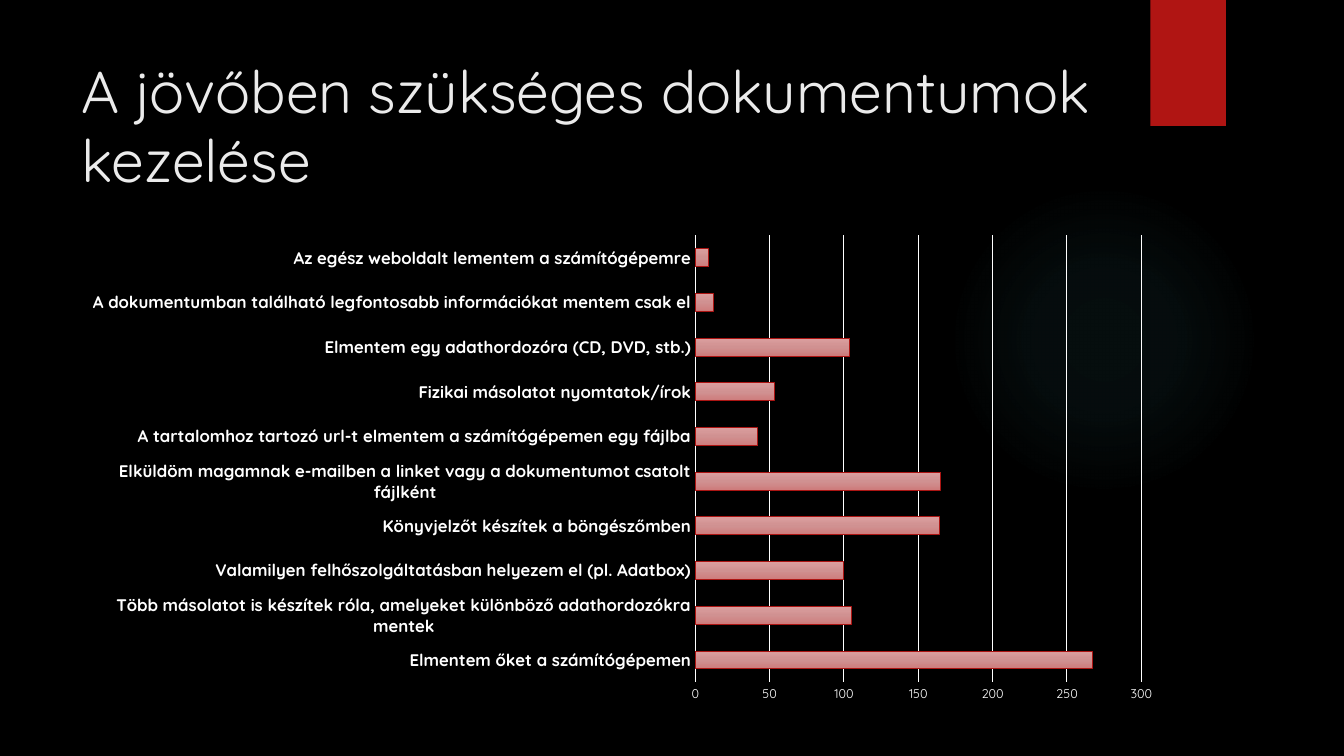
from lxml.etree import SubElement
from pptx import Presentation
from pptx.chart.data import CategoryChartData
from pptx.dml.color import RGBColor
from pptx.enum.chart import XL_CHART_TYPE, XL_TICK_MARK
from pptx.enum.shapes import MSO_SHAPE
from pptx.enum.text import MSO_ANCHOR, MSO_AUTO_SIZE, PP_ALIGN
from pptx.oxml import parse_xml
from pptx.oxml.ns import nsdecls, qn
from pptx.util import Inches, Pt

FONT = "Quicksand"
BLACK = RGBColor(0x00, 0x00, 0x00)
WHITE = RGBColor(0xFF, 0xFF, 0xFF)
TITLE_GREY = RGBColor(0xEB, 0xEB, 0xEB)
RED = RGBColor(0xB0, 0x15, 0x13)
BAR_EDGE = RGBColor(0xAC, 0x15, 0x13)
GLOW = RGBColor(0x50, 0xB9, 0xC1)
BAR_LIGHT = RGBColor(0xDB, 0x9E, 0x9E)
BAR_MID = RGBColor(0xD0, 0x91, 0x91)
BAR_DARK = RGBColor(0xCE, 0x7C, 0x7C)

RADIAL = ('<a:path %s path="circle"><a:fillToRect l="50000" t="50000" '
          'r="50000" b="50000"/></a:path>' % nsdecls("a"))
DOWNWARD = '<a:lin %s ang="5400000" scaled="0"/>' % nsdecls("a")

ANSWERS = [
    ("Elmentem őket a számítógépemen", 267),
    ("Több másolatot is készítek róla, amelyeket különböző adathordozókra mentek", 105),
    ("Valamilyen felhőszolgáltatásban helyezem el (pl. Adatbox)", 100),
    ("Könyvjelzőt készítek a böngészőmben", 164),
    ("Elküldöm magamnak e-mailben a linket vagy a dokumentumot csatolt fájlként", 165),
    ("A tartalomhoz tartozó url-t elmentem a számítógépemen egy fájlba", 42),
    ("Fizikai másolatot nyomtatok/írok", 53),
    ("Elmentem egy adathordozóra (CD, DVD, stb.)", 104),
    ("A dokumentumban található legfontosabb információkat mentem csak el", 12),
    ("Az egész weboldalt lementem a számítógépemre", 9),
]


class SlideBuilder:
    """Holds the style and the current slide, and adds each kind of element."""

    def __init__(self, prs):
        self.s = prs.slides.add_slide(prs.slide_layouts[5])
        self.s.background.fill.solid()
        self.s.background.fill.fore_color.rgb = BLACK

    def style(self, font, size, color=WHITE, bold=False):
        font.name = FONT
        font.size = Pt(size)
        font.bold = bold
        font.color.rgb = color

    def gradient(self, fill, spPr, stops, direction):
        fill.gradient()
        grad = spPr.find(qn("a:gradFill"))
        for child in list(grad):
            grad.remove(child)
        gs_list = SubElement(grad, qn("a:gsLst"))
        for pos, color, alpha in stops:
            gs = SubElement(gs_list, qn("a:gs"), pos=str(pos * 1000))
            clr = SubElement(gs, qn("a:srgbClr"), val=str(color))
            if alpha < 100:
                SubElement(clr, qn("a:alpha"), val=str(alpha * 1000))
        grad.append(parse_xml(direction))

    def shape(self, kind, left, top, width, height):
        sp = self.s.shapes.add_shape(kind, Inches(left), Inches(top),
                                     Inches(width), Inches(height))
        sp.shadow.inherit = False
        sp.line.fill.background()
        return sp

    def glow(self, left, top, size):
        sp = self.shape(MSO_SHAPE.OVAL, left, top, size, size)
        stops = [(0, GLOW, 7), (36, GLOW, 6), (69, GLOW, 0)]
        self.gradient(sp.fill, sp._element.spPr, stops, RADIAL)

    def ribbon(self, left, top, width, height):
        sp = self.shape(MSO_SHAPE.RECTANGLE, left, top, width, height)
        sp.fill.solid()
        sp.fill.fore_color.rgb = RED

    def title(self, text, left, top, width, height):
        sp = self.s.shapes.title
        sp.left, sp.top = Inches(left), Inches(top)
        sp.width, sp.height = Inches(width), Inches(height)
        tf = sp.text_frame
        tf.text = text
        tf.word_wrap = True
        tf.auto_size = MSO_AUTO_SIZE.NONE
        tf.vertical_anchor = MSO_ANCHOR.MIDDLE
        p = tf.paragraphs[0]
        p.alignment = PP_ALIGN.LEFT
        p.line_spacing = 0.97
        self.style(p.font, 42, TITLE_GREY)

    def bar_chart(self, answers, left, top, width, height):
        data = CategoryChartData()
        data.categories = [label for label, _ in answers]
        data.add_series("Series 1", [count for _, count in answers])
        chart = self.s.shapes.add_chart(
            XL_CHART_TYPE.BAR_CLUSTERED, Inches(left), Inches(top),
            Inches(width), Inches(height), data).chart
        chart.has_legend = False
        chart.has_title = False
        self.style(chart.font, 10)
        self.axes(chart)
        self.plot(chart.plots[0])
        self.place_plot(chart, x=0.565, y=0.02, w=0.404, h=0.92)

    def axes(self, chart):
        for axis, size, bold in ((chart.category_axis, 12, True),
                                 (chart.value_axis, 9, False)):
            axis.major_tick_mark = XL_TICK_MARK.NONE
            axis.minor_tick_mark = XL_TICK_MARK.NONE
            axis.format.line.fill.background()
            self.style(axis.tick_labels.font, size, bold=bold)
        chart.category_axis.has_major_gridlines = False
        axis = chart.value_axis
        axis.minimum_scale, axis.maximum_scale, axis.major_unit = 0, 300, 50
        axis.has_major_gridlines = True
        axis.major_gridlines.format.line.color.rgb = WHITE
        axis.major_gridlines.format.line.width = Pt(0.75)

    def plot(self, plot):
        plot.gap_width = 150
        plot.vary_by_categories = False
        series = plot.series[0]
        stops = [(0, BAR_LIGHT, 100), (50, BAR_MID, 100), (100, BAR_DARK, 100)]
        fmt = series.format
        self.gradient(fmt.fill, series._element.get_or_add_spPr(), stops, DOWNWARD)
        fmt.line.color.rgb = BAR_EDGE
        fmt.line.width = Pt(0.75)

    def place_plot(self, chart, **box):
        area = chart._chartSpace.chart.plotArea
        for old in area.findall(qn("c:layout")):
            area.remove(old)
        layout = parse_xml("<c:layout %s><c:manualLayout/></c:layout>" % nsdecls("c"))
        SubElement(layout[0], qn("c:layoutTarget"), val="inner")
        for side in "xy":
            SubElement(layout[0], qn(f"c:{side}Mode"), val="edge")
        for side, share in box.items():
            SubElement(layout[0], qn(f"c:{side}"), val=str(share))
        area.insert(0, layout)


def main():
    prs = Presentation()
    prs.slide_width, prs.slide_height = Inches(13.33), Inches(7.5)
    slide = SlideBuilder(prs)
    slide.glow(9.41, 1.83, 3.08)
    slide.ribbon(11.41, 0, 0.75, 1.25)
    slide.title("A jövőben szükséges dokumentumok kezelése", 0.71, 0.5, 10.29, 1.53)
    slide.bar_chart(ANSWERS, 0.71, 2.24, 10.95, 4.82)
    prs.save("out.pptx")


if __name__ == "__main__":
    main()
